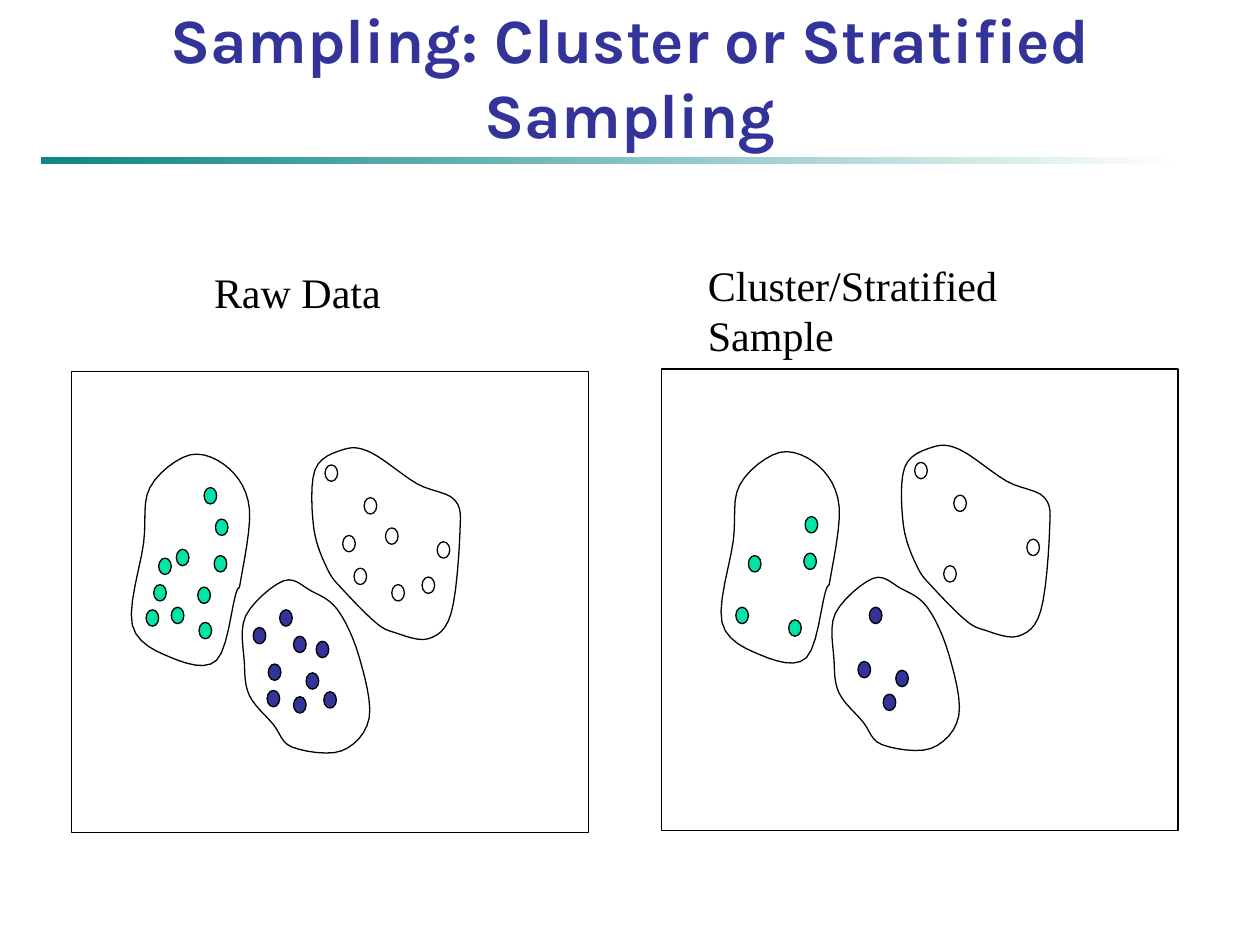
from dataclasses import dataclass

from lxml import etree
from pptx import Presentation
from pptx.dml.color import RGBColor
from pptx.enum.shapes import MSO_SHAPE
from pptx.enum.text import MSO_ANCHOR, PP_ALIGN
from pptx.oxml.ns import qn
from pptx.util import Pt

RECT = MSO_SHAPE.RECTANGLE
DOT = MSO_SHAPE.FLOWCHART_CONNECTOR
LEFT, CENTER = PP_ALIGN.LEFT, PP_ALIGN.CENTER
TOP, BOTTOM = MSO_ANCHOR.TOP, MSO_ANCHOR.BOTTOM

BLACK = RGBColor(0x00, 0x00, 0x00)
WHITE = RGBColor(0xFF, 0xFF, 0xFF)
INDIGO = RGBColor(0x33, 0x33, 0x99)
GREEN = RGBColor(0x00, 0xE4, 0xA8)
TEAL = RGBColor(0x00, 0x80, 0x80)

PX = 9144
DOT_W, DOT_H = 10, 13
CURVE_STEPS = 6

Point = tuple[int, int]


@dataclass(frozen=True)
class Cluster:
    color: RGBColor
    outline: list[Point]
    sampled: list[Point]
    unsampled: list[Point]


@dataclass(frozen=True)
class Panel:
    dx: int
    dy: int
    sample_only: bool


@dataclass(frozen=True)
class Label:
    text: str
    box: tuple[int, int, int, int]
    font: str
    size: int
    color: RGBColor
    bold: bool = False
    align: PP_ALIGN = LEFT
    anchor: MSO_ANCHOR = TOP


CLUSTERS = [
    Cluster(
        WHITE,
        [(361, 397), (365, 424), (358, 487), (340, 507), (313, 502), (298, 494),
         (273, 469), (260, 452), (249, 419), (250, 373), (272, 357), (294, 359),
         (331, 384)],
        [(289, 395), (281, 451), (347, 430), (258, 369)],
        [(306, 419), (272, 425), (335, 458), (311, 464)],
    ),
    Cluster(
        INDIGO,
        [(217, 575), (198, 552), (194, 526), (195, 489), (225, 461), (247, 469),
         (268, 484), (285, 521), (293, 570), (271, 596), (232, 593)],
        [(233, 553), (243, 534), (213, 527), (222, 484)],
        [(201, 498), (251, 509), (212, 548), (233, 505), (257, 549)],
    ),
    Cluster(
        GREEN,
        [(187, 472), (172, 524), (136, 522), (105, 496), (114, 431), (119, 387),
         (151, 361), (182, 372), (198, 404), (191, 461)],
        [(116, 484), (126, 443), (158, 494), (170, 441), (171, 412)],
        [(136, 482), (122, 464), (157, 466), (140, 436), (162, 387)],
    ),
]

PANELS = [Panel(0, 0, False), Panel(468, -2, True)]

LABELS = [
    Label("Sampling: Cluster or Stratified Sampling", (25, 33, 950, 92),
          "Karla", 36, INDIGO, True, CENTER, BOTTOM),
    Label("Raw Data", (160, 207, 161, 50), "Times New Roman", 24, BLACK),
    Label("Cluster/Stratified Sample", (552, 201, 355, 50), "Times New Roman", 24, BLACK),
]


def style(shape, fill: RGBColor | None = None) -> None:
    shape.shadow.inherit = False
    if fill is None:
        shape.fill.background()
    else:
        shape.fill.solid()
        shape.fill.fore_color.rgb = fill
    shape.line.color.rgb = BLACK
    shape.line.width = Pt(0.75)


def add_preset(s, kind, x: int, y: int, w: int, h: int):
    return s.shapes.add_shape(kind, x * PX, y * PX, w * PX, h * PX)


def spline(a: int, b: int, c: int, d: int, t: float) -> float:
    return b + t / 2 * (c - a + t * (2 * a - 5 * b + 4 * c - d
                                     + t * (3 * (b - c) + d - a)))


def smooth_outline(points: list[Point]) -> list[tuple[float, float]]:
    count = len(points)
    result = []
    for i in range(count):
        xs, ys = zip(*(points[(i + k) % count] for k in range(-1, 3)))
        for step in range(CURVE_STEPS):
            t = step / CURVE_STEPS
            result.append((spline(*xs, t), spline(*ys, t)))
    return result


def add_cluster(s, cluster: Cluster, panel: Panel) -> None:
    dots = cluster.sampled if panel.sample_only else cluster.sampled + cluster.unsampled
    for x, y in dots:
        style(add_preset(s, DOT, x + panel.dx, y + panel.dy, DOT_W, DOT_H), cluster.color)
    start, *rest = [((x + panel.dx) * PX, (y + panel.dy) * PX)
                    for x, y in smooth_outline(cluster.outline)]
    builder = s.shapes.build_freeform(*start)
    builder.add_line_segments(rest, close=True)
    style(builder.convert_to_shape())


def add_label(s, label: Label) -> None:
    tf = s.shapes.add_textbox(*(v * PX for v in label.box)).text_frame
    tf.word_wrap = True
    tf.vertical_anchor = label.anchor
    tf.text = label.text
    p = tf.paragraphs[0]
    p.alignment = label.align
    font = p.runs[0].font
    font.name, font.size, font.bold = label.font, Pt(label.size), label.bold
    font.color.rgb = label.color


def add_title_rule(s) -> None:
    sp = add_preset(s, RECT, 33, 125, 900, 5)
    sp.shadow.inherit = False
    sp.line.fill.background()
    sp.fill.gradient()
    sp.fill.gradient_angle = 0
    for stop, color, position in zip(sp.fill.gradient_stops, (TEAL, WHITE), (0, 1)):
        stop.color.rgb = color
        stop.position = position
    teal = next(sp.element.iter(qn("a:srgbClr")))
    etree.SubElement(teal, qn("a:alpha")).set("val", "95000")


def main() -> None:
    prs = Presentation()
    prs.slide_width, prs.slide_height = 1000 * PX, 750 * PX
    s = prs.slides.add_slide(prs.slide_layouts[6])
    add_title_rule(s)
    for panel in PANELS:
        style(add_preset(s, RECT, 57 + panel.dx, 295 + panel.dy, 410, 366))
        for cluster in CLUSTERS:
            add_cluster(s, cluster, panel)
    for label in LABELS:
        add_label(s, label)
    prs.save("out.pptx")


if __name__ == "__main__":
    main()
